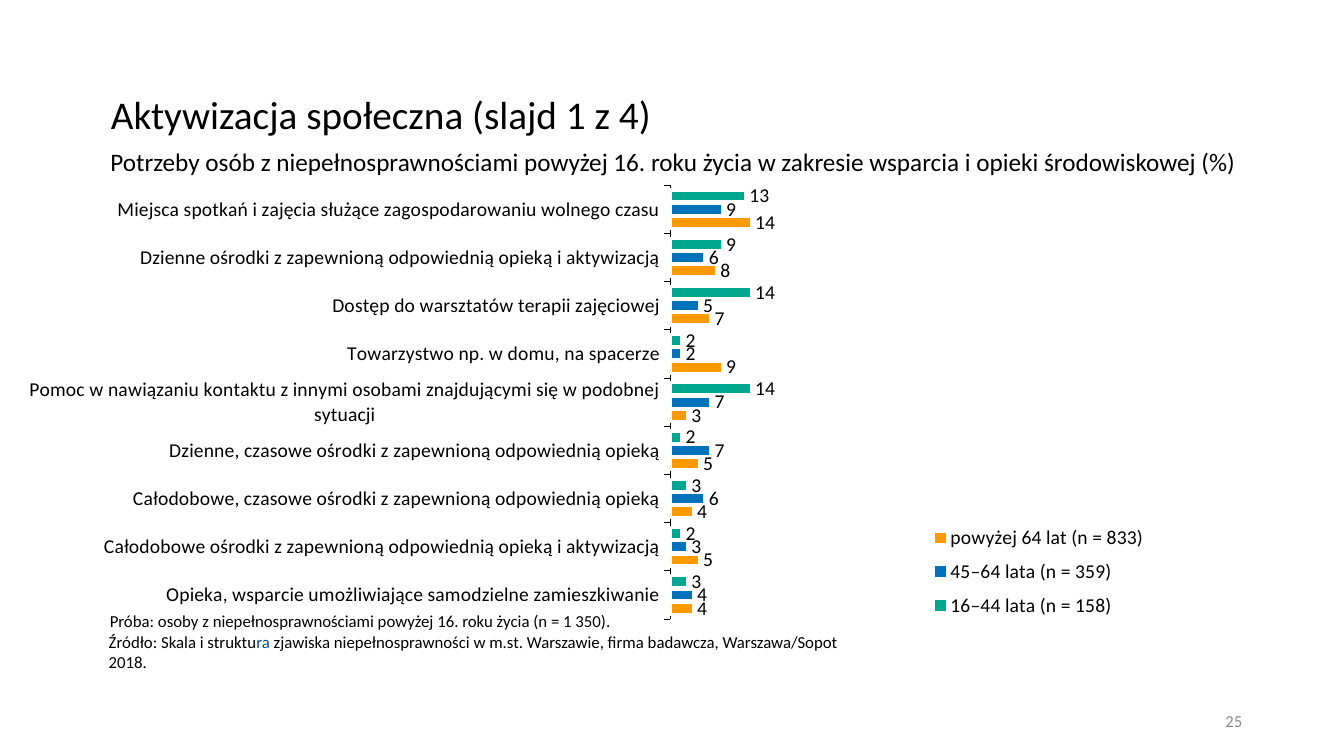
from lxml import etree
from pptx import Presentation
from pptx.chart.data import CategoryChartData
from pptx.dml.color import RGBColor
from pptx.enum import chart as ch, text as tx
from pptx.oxml import ns
from pptx.util import Inches, Pt

# Content
TITLE = "Aktywizacja społeczna (slajd 1 z 4)"
SUBTITLE = ("Potrzeby osób z niepełnosprawnościami powyżej 16. roku życia "
            "w zakresie wsparcia i opieki środowiskowej (%)")
SAMPLE = "Próba: osoby z niepełnosprawnościami powyżej 16. roku życia (n = 1 350)."
SOURCE = [
    ("Źródło: Skala i struktu", "000000"),
    ("ra", "004B88"),
    (" zjawiska niepełnosprawności w m.st. Warszawie, "
     "firma badawcza, Warszawa/Sopot 2018.", "000000"),
]
PAGE = "25"
AGE_GROUPS = [  # name, colour, label format
    ("16–44 lata (n = 158)", "00A78E", "0;[Red]0"),
    ("45–64 lata (n = 359)", "0072BC", "#,##0"),
    ("powyżej 64 lat (n = 833)", "FF9900", "###0"),
]
NEEDS = [  # need, one percentage per age group
    ("Miejsca spotkań i zajęcia służące zagospodarowaniu wolnego czasu", 13, 9, 14),
    ("Dzienne ośrodki z zapewnioną odpowiednią opieką i aktywizacją", 9, 6, 8),
    ("Dostęp do warsztatów terapii zajęciowej", 14, 5, 7),
    ("Towarzystwo np. w domu, na spacerze", 2, 2, 9),
    ("Pomoc w nawiązaniu kontaktu z innymi osobami znajdującymi się "
     "w podobnej sytuacji", 14, 7, 3),
    ("Dzienne, czasowe ośrodki z zapewnioną odpowiednią opieką", 2, 7, 5),
    ("Całodobowe, czasowe ośrodki z zapewnioną odpowiednią opieką", 3, 6, 4),
    ("Całodobowe ośrodki z zapewnioną odpowiednią opieką i aktywizacją", 2, 3, 5),
    ("Opieka, wsparcie umożliwiające samodzielne zamieszkiwanie", 3, 4, 4),
]
FONT = "Calibri"


def color(hex_string):
    return RGBColor.from_string(hex_string)


def set_font(font, size, hex_string="000000"):
    font.name, font.size = FONT, Pt(size)
    font.color.rgb = color(hex_string)


def write(shape, content, size, hex_string="000000", align=tx.PP_ALIGN.LEFT,
          anchor=tx.MSO_ANCHOR.TOP, spacing=None):
    """Fill a shape with one paragraph: a string or (text, colour) runs."""
    frame = shape.text_frame
    frame.word_wrap = True
    frame.auto_size = tx.MSO_AUTO_SIZE.NONE
    frame.vertical_anchor = anchor
    paragraph = frame.paragraphs[0]
    paragraph.alignment = align
    paragraph.line_spacing = spacing
    runs = [(content, hex_string)] if isinstance(content, str) else content
    for words, run_color in runs:
        run = paragraph.add_run()
        run.text = words
        set_font(run.font, size, run_color)


def place(parent, index, x, y, w, h, inner=False):
    """Give a chart part a manual layout in fractions of the chart."""
    for old in parent.findall(ns.qn("c:layout")):
        parent.remove(old)
    layout = etree.Element(ns.qn("c:layout"))
    manual = etree.SubElement(layout, ns.qn("c:manualLayout"))
    settings = [("layoutTarget", "inner")] if inner else []
    settings += [("xMode", "edge"), ("yMode", "edge"),
                 ("x", x), ("y", y), ("w", w), ("h", h)]
    for tag, value in settings:
        etree.SubElement(manual, ns.qn("c:" + tag)).set("val", str(value))
    parent.insert(index, layout)


deck = Presentation()
deck.slide_width, deck.slide_height = Inches(13.33), Inches(7.5)
slide = deck.slides.add_slide(deck.slide_layouts[5])


def add_text(left, top, width, height, content, size, **style):
    box = slide.shapes.add_textbox(*map(Inches, (left, top, width, height)))
    write(box, content, size, **style)


# Title and subtitle
title = slide.shapes.title
title.left, title.top = Inches(1), Inches(0.43)
title.width, title.height = Inches(11.5), Inches(1.45)
write(title, TITLE, 28, anchor=tx.MSO_ANCHOR.MIDDLE, spacing=0.9)
add_text(0.78, 1.4, 11.79, 0.4, SUBTITLE, 18, align=tx.PP_ALIGN.CENTER)

# Bar chart of needs by age group
needs, *shares = zip(*NEEDS)
data = CategoryChartData()
data.categories = needs
for (group, _, label_format), values in zip(AGE_GROUPS, shares):
    data.add_series(group, values, label_format)
chart = slide.shapes.add_chart(
    ch.XL_CHART_TYPE.BAR_CLUSTERED, Inches(0.29), Inches(1.81),
    Inches(12.21), Inches(4.6), data).chart
chart.has_title = False
set_font(chart.font, 9)
plot = chart.plots[0]
plot.gap_width, plot.overlap, plot.vary_by_categories = 81, -10, False

for bars, (_, fill, label_format) in zip(plot.series, AGE_GROUPS):
    bars.format.fill.solid()
    bars.format.fill.fore_color.rgb = color(fill)
    bars.format.line.color.rgb = color("FFFFFF")
    bars.format.line.width = Pt(2.25)
    labels = bars.data_labels
    labels.show_value = True
    labels.position = ch.XL_LABEL_POSITION.OUTSIDE_END
    labels.number_format, labels.number_format_is_linked = label_format, False
    set_font(labels.font, 14)

# Axes and legend
need_axis, share_axis = chart.category_axis, chart.value_axis
need_axis.reverse_order = True
need_axis.major_tick_mark = ch.XL_TICK_MARK.OUTSIDE
need_axis.format.line.color.rgb = color("000000")
need_axis.format.line.width = Pt(0.5)
set_font(need_axis.tick_labels.font, 14)
share_axis.minimum_scale, share_axis.maximum_scale = 0, 100
share_axis.has_major_gridlines = False
share_axis.visible = False

chart.has_legend = True
legend = chart.legend
legend.position = ch.XL_LEGEND_POSITION.BOTTOM
legend.include_in_layout = False
set_font(legend.font, 14)
place(chart.element.find(".//" + ns.qn("c:legend")), 1, 0.72, 0.72, 0.2, 0.24)
place(chart.element.find(".//" + ns.qn("c:plotArea")), 0,
      0.52, 0.006, 0.471, 0.936, inner=True)

# Notes under the chart and page number
add_text(0.99, 6.01, 5.99, 0.3, SAMPLE, 12, anchor=tx.MSO_ANCHOR.MIDDLE)
add_text(0.98, 6.22, 7.79, 0.3, SOURCE, 12)
add_text(9.42, 6.95, 3, 0.4, PAGE, 12, hex_string="8C8C8C",
         align=tx.PP_ALIGN.RIGHT, anchor=tx.MSO_ANCHOR.MIDDLE)

deck.save("out.pptx")
